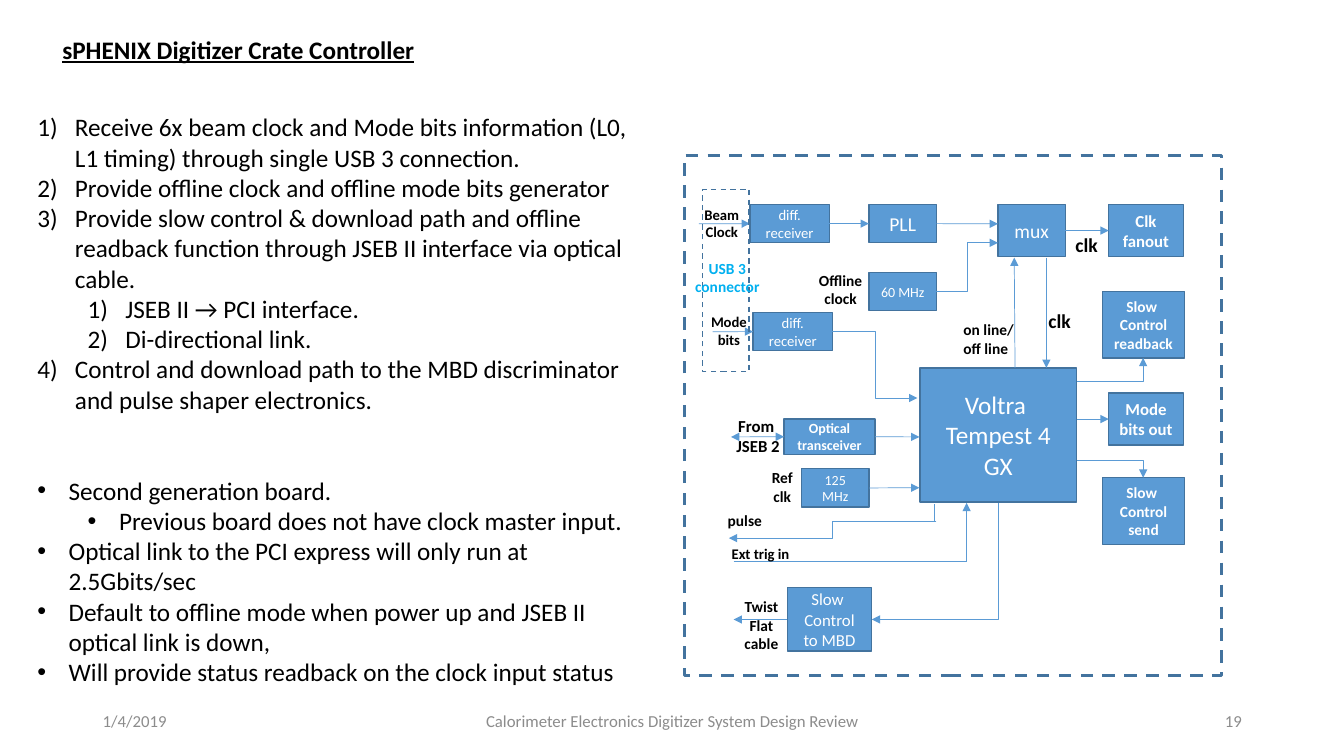
import dataclasses

import lxml.etree
import pptx
import pptx.dml.color
import pptx.enum.dml
import pptx.enum.shapes
import pptx.enum.text
import pptx.oxml.ns
import pptx.util

Cm = pptx.util.Cm
Pt = pptx.util.Pt
qn = pptx.oxml.ns.qn
ALIGN = pptx.enum.text.PP_ALIGN
MIDDLE = pptx.enum.text.MSO_ANCHOR.MIDDLE
TOP, LEFT, BOTTOM, RIGHT = range(4)


@dataclasses.dataclass(frozen=True)
class Theme:
    font: str = "Calibri"
    fill: str = "5B9BD5"
    edge: str = "43739E"
    ink: str = "000000"
    light: str = "FFFFFF"
    accent: str = "00B0F0"
    muted: str = "8C8C8C"
    body: float = 18
    footer: float = 12
    wire: float = 0.5


THEME = Theme()


def rgb(value):
    return pptx.dml.color.RGBColor.from_string(value)


def add_span(para, text, size, colour, bold=False):
    span = para.add_run()
    span.text = text
    span.font.name = THEME.font
    span.font.size = Pt(size)
    span.font.bold = bold
    span.font.color.rgb = rgb(colour)
    return span


def write_lines(frame, lines, size, colour, bold=False, align=ALIGN.CENTER):
    for index, line in enumerate(lines):
        para = frame.add_paragraph() if index else frame.paragraphs[0]
        para.alignment = align
        add_span(para, line, size, colour, bold)


def add_text_box(page, box, wrap=True):
    frame = page.shapes.add_textbox(*(Cm(length) for length in box)).text_frame
    frame.word_wrap = wrap
    return frame


def add_block(page, box, lines, size, bold=False):
    block = page.shapes.add_shape(pptx.enum.shapes.MSO_SHAPE.RECTANGLE, *(Cm(length) for length in box))
    block.shadow.inherit = False
    block.fill.solid()
    block.fill.fore_color.rgb = rgb(THEME.fill)
    block.line.color.rgb = rgb(THEME.edge)
    block.line.width = Pt(1)
    block.text_frame.word_wrap = True
    block.text_frame.vertical_anchor = MIDDLE
    write_lines(block.text_frame, lines, size, THEME.light, bold)
    return block


def add_dashed_frame(page, box, width):
    frame = page.shapes.add_shape(pptx.enum.shapes.MSO_SHAPE.RECTANGLE, *(Cm(length) for length in box))
    frame.shadow.inherit = False
    frame.fill.background()
    frame.line.color.rgb = rgb(THEME.edge)
    frame.line.width = Pt(width)
    frame.line.dash_style = pptx.enum.dml.MSO_LINE.DASH


def add_wire(page, start, end, bends=0, arrows=("tailEnd",), source=None, target=None):
    """Draw a wire; source and target are (block, side) pairs to join."""
    kinds = pptx.enum.shapes.MSO_CONNECTOR
    kind = kinds.ELBOW if bends else kinds.STRAIGHT
    wire = page.shapes.add_connector(kind, *(Cm(length) for length in (*start, *end)))
    if bends == 1:
        wire._element.spPr.find(qn("a:prstGeom")).set("prst", "bentConnector2")
    if source:
        wire.begin_connect(*source)
    if target:
        wire.end_connect(*target)
    wire.line.color.rgb = rgb(THEME.fill)
    wire.line.width = Pt(THEME.wire)
    outline = wire.line._get_or_add_ln()
    for arrow in arrows:
        lxml.etree.SubElement(outline, qn("a:" + arrow), type="triangle")
    lxml.etree.SubElement(wire._element.spPr, qn("a:effectLst"))


def add_diagram(page, box):
    left, top, width, height = box

    def at(x, y):
        return left + x, top + y

    blocks = {}
    for name, place, size, lines, point, bold in (
        ("clock receiver", (1.65, 1.24), (2, 0.97), ("diff.", "receiver"), 10.5, False),
        ("mode receiver", (1.73, 3.96), (2, 0.97), ("diff.", "receiver"), 10.5, False),
        ("pll", (4.65, 1.24), (1.7, 0.97), ("PLL",), 14, False),
        ("mux", (7.9, 1.24), (1.7, 1.32), ("mux",), 14, False),
        ("oscillator", (4.65, 2.95), (1.7, 0.97), ("60 MHz",), 10, False),
        ("fpga", (5.94, 5.36), (3.94, 3.38), ("Voltra ", "Tempest 4 GX"), 18, False),
        ("transceiver", (2.51, 6.65), (2.29, 0.89), ("Optical", "transceiver"), 10, True),
        ("reference", (2.95, 7.9), (1.7, 0.97), ("125 MHz",), 10, False),
        ("fanout", (10.69, 1.24), (1.88, 1.32), ("Clk", "fanout"), 12, True),
        ("readback", (10.54, 3.43), (2.06, 1.68), ("Slow ", "Control", "readback"), 11, True),
        ("mode out", (10.69, 5.99), (1.88, 1.32), ("Mode bits out",), 12, True),
        ("send", (10.54, 8.13), (2.06, 1.68), ("Slow ", "Control", "send"), 11, True),
        ("discriminator", (2.59, 10.9), (2.13, 1.6), ("Slow ", "Control to MBD"), 12, False),
    ):
        blocks[name] = add_block(page, (*at(*place), *size), lines, point, bold)

    for start, end, source, target in (
        ((0.36, 1.73), (1.65, 1.73), None, ("clock receiver", LEFT)),
        ((3.65, 1.73), (4.65, 1.73), ("clock receiver", RIGHT), ("pll", LEFT)),
        ((6.35, 1.73), (7.9, 1.73), ("pll", RIGHT), None),
        ((9.6, 1.9), (10.69, 1.9), ("mux", RIGHT), ("fanout", LEFT)),
        ((8.33, 5.36), (8.31, 2.58), None, None),
        ((9.12, 2.58), (9.12, 5.36), None, None),
        ((0.71, 4.45), (1.73, 4.45), None, ("mode receiver", LEFT)),
        ((4.8, 7.1), (5.92, 7.1), ("transceiver", RIGHT), None),
        ((4.65, 8.38), (5.92, 8.38), ("reference", RIGHT), None),
        ((9.88, 6.65), (10.69, 6.65), None, ("mode out", LEFT)),
        ((2.59, 11.7), (1.24, 11.7), ("discriminator", LEFT), None),
        ((7.11, 10.24), (7.11, 8.76), None, None),
    ):
        joins = [end_point and (blocks[end_point[0]], end_point[1]) for end_point in (source, target)]
        add_wire(page, at(*start), at(*end), source=joins[0], target=joins[1])

    add_wire(page, at(1.17, 7.1), at(2.51, 7.1), arrows=("headEnd", "tailEnd"),
             target=(blocks["transceiver"], LEFT))
    for start, end in (((6.3, 8.79), (6.3, 9.22)), ((1.24, 10.24), (7.11, 10.24))):
        add_wire(page, at(*start), at(*end), arrows=())
    for start, end, bends, arrow in (
        ((6.35, 3.43), (7.9, 2.21), 2, "tailEnd"),
        ((3.73, 4.45), (5.87, 6.12), 2, "tailEnd"),
        ((6.35, 9.22), (1.12, 9.65), 2, "tailEnd"),
        ((9.88, 5.69), (11.56, 5.11), 1, "tailEnd"),
        ((9.88, 7.7), (11.56, 8.13), 1, "tailEnd"),
        ((4.72, 11.7), (7.9, 8.76), 1, "headEnd"),
    ):
        add_wire(page, at(*start), at(*end), bends, (arrow,))

    add_dashed_frame(page, (*at(0.46, 0.86), 1.17, 4.6), 1)
    add_dashed_frame(page, box, 2.25)

    for place, size, lines, point, align, colour in (
        ((0.23, 1.14), (1.42, 1.19), ("Beam", "Clock"), 10.5, ALIGN.CENTER, THEME.ink),
        ((6.78, 4.04), (1.8, 1.19), ("on line/", "off line"), 11, ALIGN.LEFT, THEME.ink),
        ((9.6, 1.83), (1.09, 0.86), ("clk",), 14, ALIGN.LEFT, THEME.ink),
        ((8.92, 3.76), (1.09, 0.86), ("clk",), 14, ALIGN.LEFT, THEME.ink),
        ((0.41, 3.86), (1.42, 1.14), ("Mode", "bits"), 10.5, ALIGN.CENTER, THEME.ink),
        ((1.04, 6.43), (1.63, 1.27), ("From ", "JSEB 2"), 12, ALIGN.CENTER, THEME.ink),
        ((3.12, 2.79), (1.63, 1.19), ("Offline", "clock"), 11, ALIGN.CENTER, THEME.ink),
        ((1.93, 7.77), (1.07, 1.19), ("Ref", "clk"), 11, ALIGN.CENTER, THEME.ink),
        ((1.24, 11.02), (1.4, 1.68), ("Twist", "Flat", "cable"), 11, ALIGN.CENTER, THEME.ink),
        ((0.84, 8.84), (1.37, 0.74), ("pulse",), 11, ALIGN.LEFT, THEME.ink),
        ((0.94, 9.7), (2.01, 0.74), ("Ext trig in",), 10.5, ALIGN.LEFT, THEME.ink),
        ((0, 2.49), (2.16, 1.19), ("USB 3", "connector"), 11, ALIGN.CENTER, THEME.accent),
    ):
        frame = add_text_box(page, (*at(*place), *size), wrap=False)
        write_lines(frame, lines, point, colour, True, align)


def add_title(page, box):
    para = add_text_box(page, box, wrap=False).paragraphs[0]
    add_span(para, "sPHENIX Digitizer Crate Controller", THEME.body, THEME.ink, True).font.underline = True


def add_points(page, box):
    numbered = (
        (0, "Receive 6x beam clock and Mode bits information (L0, L1 timing) through single USB 3 connection."),
        (0, "Provide offline clock and offline mode bits generator"),
        (0, "Provide slow control & download path and offline readback function "
            "through JSEB II interface via optical cable."),
        (1, "JSEB II → PCI interface."),
        (1, "Di-directional link."),
        (0, "Control and download path to the MBD discriminator and pulse shaper electronics."),
    )
    bulleted = (
        (0, "Second generation board."),
        (1, "Previous board does not have clock master input."),
        (0, "Optical link to the PCI express will only run at 2.5Gbits/sec"),
        (0, "Default to offline mode when power up and JSEB II optical link is down,"),
        (0, "Will provide status readback on the clock input status"),
    )
    frame = add_text_box(page, box)
    for index, (level, text) in enumerate(numbered + bulleted):
        para = frame.add_paragraph() if index else frame.paragraphs[0]
        para.level = level
        if index == len(numbered):
            para.space_before = Pt(43.5)
        add_span(para, text, THEME.body, THEME.ink)
        is_numbered = index < len(numbered)
        hang = 0.95 if is_numbered else 0.79
        properties = para._p.get_or_add_pPr()
        properties.set("marL", str(Cm(hang + 1.27 * level)))
        properties.set("indent", str(-Cm(hang)))
        if is_numbered:
            lxml.etree.SubElement(properties, qn("a:buFont"), typeface=THEME.font)
            lxml.etree.SubElement(properties, qn("a:buAutoNum"), type="arabicParenR")
        else:
            lxml.etree.SubElement(properties, qn("a:buFont"), typeface="Arial")
            lxml.etree.SubElement(properties, qn("a:buChar"), char="•")


def add_footer(page, box):
    left, top, width, height = box
    for offset, share, text, align in (
        (0, 7.62, "1/4/2019", ALIGN.LEFT),
        (8.89, 11.43, "Calorimeter Electronics Digitizer System Design Review", ALIGN.CENTER),
        (width - 7.62, 7.62, "19", ALIGN.RIGHT),
    ):
        frame = add_text_box(page, (left + offset, top, share, height))
        frame.vertical_anchor = MIDDLE
        write_lines(frame, (text,), THEME.footer, THEME.muted, align=align)


def main():
    deck = pptx.Presentation()
    deck.slide_width = Cm(33.87)
    deck.slide_height = Cm(19.05)
    page = deck.slides.add_slide(deck.slide_layouts[6])
    add_diagram(page, (17.25, 3.91, 13.54, 13.11))
    add_title(page, (1.32, 0.74, 9.5, 1.02))
    add_points(page, (0.69, 2.69, 15.98, 15.65))
    add_footer(page, (2.34, 17.65, 29.21, 1.02))
    deck.save("out.pptx")


if __name__ == "__main__":
    main()
